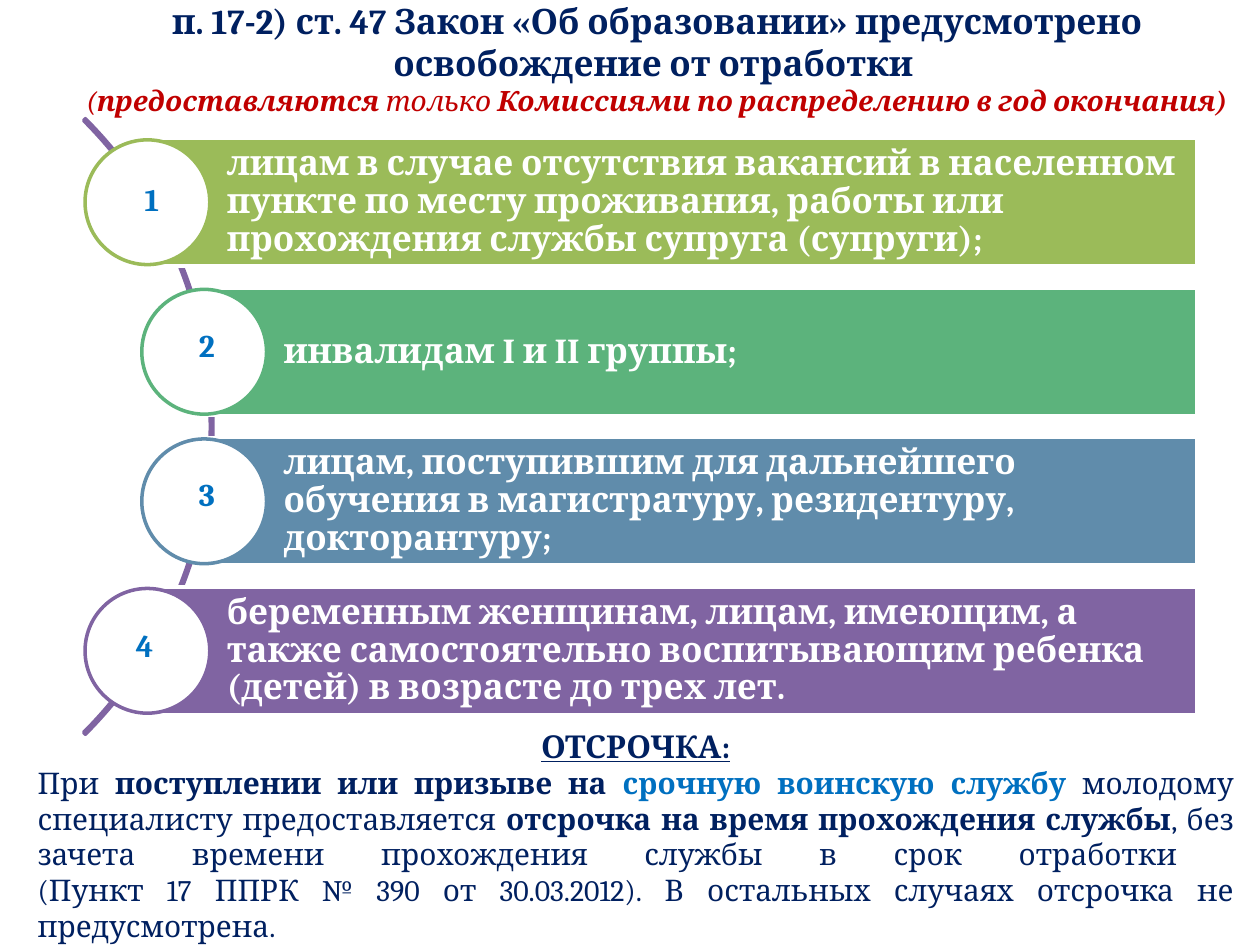
import pptx
import pptx.util
import pptx.dml.color
import pptx.enum.shapes
import pptx.enum.text

Inches, Pt = pptx.util.Inches, pptx.util.Pt
SHAPE = pptx.enum.shapes.MSO_SHAPE
ALIGN = pptx.enum.text.PP_ALIGN
MIDDLE = pptx.enum.text.MSO_ANCHOR.MIDDLE

COLORS = {
    "navy": "002060", "red": "C00000", "blue": "0070C0", "white": "FFFFFF",
    "lime": "9BBB59", "green": "5CB37C", "steel": "608CAB", "plum": "8064A2",
}

# Text, colour, left edge of the bar, offset of the number from the bar
ITEMS = [
    ("лицам в случае отсутствия вакансий в населенном пункте по месту "
     "проживания, работы или прохождения службы супруга (супруги);",
     "lime", 1.17, (-0.12, 0.28)),
    ("инвалидам I и II группы;", "green", 1.62, (-0.14, 0.25)),
    ("лицам, поступившим для дальнейшего обучения в магистратуру, "
     "резидентуру, докторантуру;", "steel", 1.62, (-0.14, 0.25)),
    ("беременным женщинам, лицам, имеющим, а также самостоятельно "
     "воспитывающим ребенка (детей) в возрасте до трех лет.",
     "plum", 1.17, (-0.19, 0.26)),
]


def color(name):
    return pptx.dml.color.RGBColor.from_string(COLORS[name])


def assign(obj, values):
    for key, value in values.items():
        setattr(obj, key, value)


def write(par, runs, **base):
    """Add (text, changes) runs; a text of None is a line break."""
    style = {"name": "Cambria", **base}
    for text, change in runs:
        if text is None:
            par.add_line_break()
            continue
        style.update(change)
        run = par.add_run()
        run.text = text
        assign(run.font, {k: v for k, v in style.items() if k != "color"})
        run.font.color.rgb = color(style["color"])


def add_box(slide, box, **values):
    frame = slide.shapes.add_textbox(*map(Inches, box)).text_frame
    assign(frame, {"word_wrap": True, **values})
    return frame


def add_shape(slide, kind, box, fill, line):
    shape = slide.shapes.add_shape(kind, *map(Inches, box))
    shape.shadow.inherit = False
    if fill:
        shape.fill.solid()
        shape.fill.fore_color.rgb = color(fill)
    else:
        shape.fill.background()
    shape.line.color.rgb = color(line)
    shape.line.width = Pt(2)
    return shape


def add_title(slide, box):
    par = add_box(slide, box, vertical_anchor=MIDDLE).paragraphs[0]
    par.alignment = ALIGN.CENTER
    write(par, [
        ("п. 17-2) ст. 47 Закон «Об образовании» предусмотрено "
         "освобождение от отработки ", {}),
        (None, {}),
        ("(", {"size": Pt(16), "color": "red", "bold": False, "italic": True}),
        ("предоставляются ", {"bold": True}),
        ("только ", {"bold": False}),
        ("Комиссиями по распределению в год окончания)", {"bold": True}),
    ], size=Pt(20), color="navy", bold=True)


def add_item(slide, box, num, text, hue, shift):
    left, top, width, height = box
    # Bar with its text
    bar = add_shape(slide, SHAPE.RECTANGLE, box, hue, "white")
    pad = Inches(0.06)
    assign(bar.text_frame, {
        "word_wrap": True, "vertical_anchor": MIDDLE,
        "margin_left": Inches(0.63), "margin_right": pad,
        "margin_top": pad, "margin_bottom": pad,
    })
    par = bar.text_frame.paragraphs[0]
    assign(par, {"alignment": ALIGN.LEFT, "line_spacing": 0.9})
    write(par, [(text, {})], size=Pt(20), color="white", bold=True)
    # Circle centred on the left edge of the bar
    size = 0.99
    add_shape(slide, SHAPE.OVAL,
              (left - size / 2, top + (height - size) / 2, size, size),
              "white", hue)
    # Number
    dx, dy = shift
    frame = add_box(slide, (left + dx, top + dy, 0.33, 0.4), word_wrap=False)
    write(frame.paragraphs[0], [(str(num), {})],
          size=Pt(18), color="blue", bold=True)


def add_list(slide, box):
    left, top, width, height = box
    # Arc behind the bars
    size = 6.91
    arc = add_shape(slide, SHAPE.BLOCK_ARC,
                    (left + 1.01 - size, top - 1.17, size, size), None, "plum")
    for i, value in enumerate((189, 27, 0.003)):
        arc.adjustments[i] = value
    # Evenly spaced bars sharing one right edge
    bar = 1.01
    step = (height - bar) / (len(ITEMS) - 1)
    for i, (text, hue, start, shift) in enumerate(ITEMS):
        add_item(slide, (start, top + i * step, left + width - start, bar),
                 i + 1, text, hue, shift)


def add_note(slide, box):
    frame = add_box(slide, box)
    head = frame.paragraphs[0]
    head.alignment = ALIGN.CENTER
    write(head, [("ОТСРОЧКА:", {})],
          size=Pt(18), color="navy", bold=True, underline=True)
    body = frame.add_paragraph()
    body.alignment = ALIGN.JUSTIFY
    write(body, [
        ("При ", {}),
        ("поступлении или призыве на ", {"bold": True}),
        ("срочную воинскую службу ", {"color": "blue"}),
        ("молодому специалисту предоставляется ",
         {"color": "navy", "bold": False}),
        ("отсрочка на время прохождения службы", {"bold": True}),
        (", без зачета времени прохождения службы в срок отработки ",
         {"bold": False}),
        (None, {}),
        ("(Пункт 17 ППРК № 390 от 30.03.2012). "
         "В остальных случаях отсрочка не предусмотрена.", {}),
    ], size=Pt(17), color="navy", bold=False)


def main():
    deck = pptx.Presentation()
    assign(deck, {"slide_width": Inches(10), "slide_height": Inches(7.5)})
    slide = deck.slides.add_slide(deck.slide_layouts[6])
    add_title(slide, (0.43, -0.06, 9.57, 1.04))
    add_list(slide, (0.68, 1.1, 8.82, 4.57))
    add_note(slide, (0.2, 5.72, 9.69, 1.83))
    deck.save("out.pptx")


if __name__ == "__main__":
    main()
